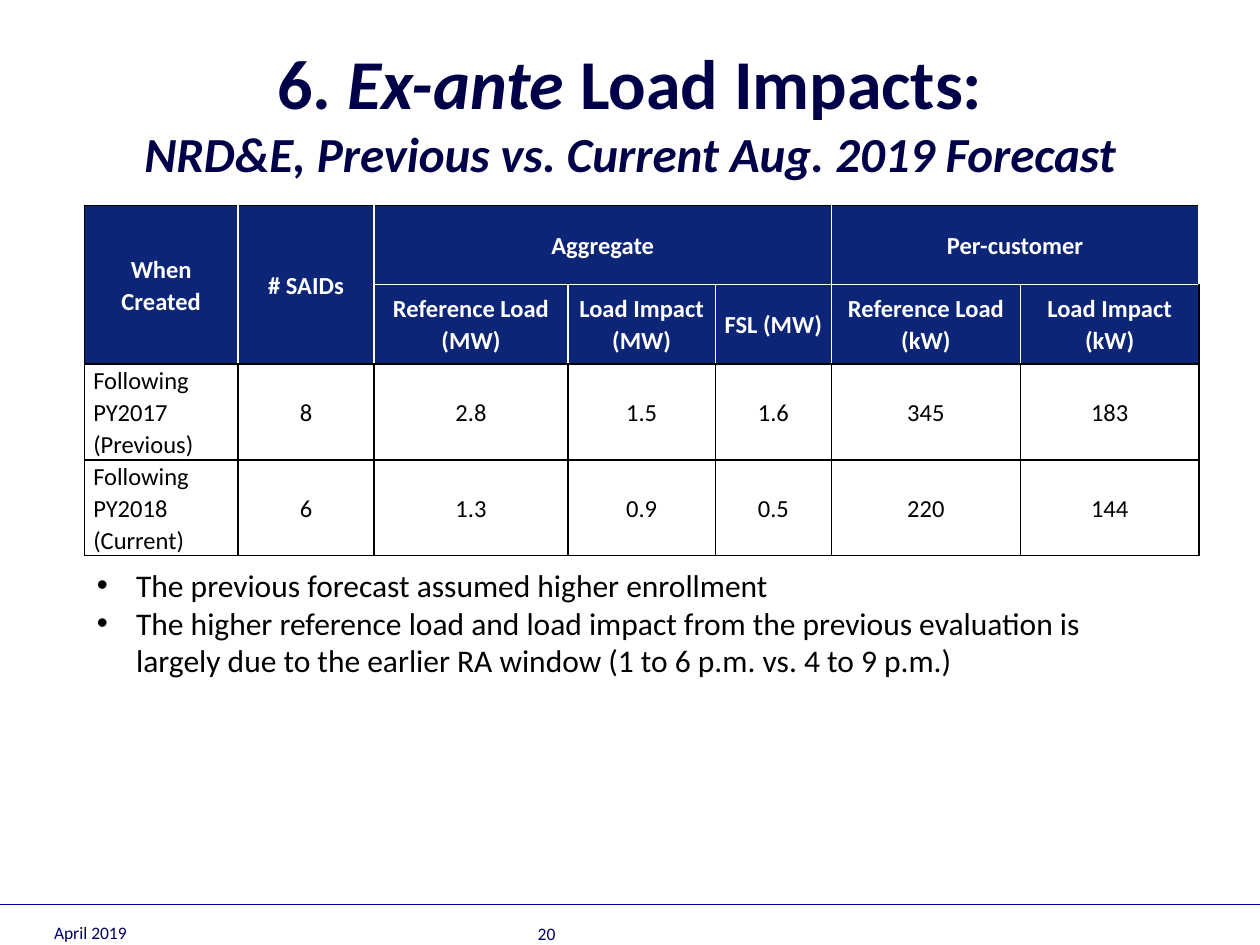
"""Build the slide comparing previous and current ex-ante load impacts."""
from lxml import etree
from pptx import Presentation
from pptx.dml.color import RGBColor
from pptx.enum.shapes import MSO_CONNECTOR
from pptx.enum.text import MSO_ANCHOR, MSO_AUTO_SIZE, PP_ALIGN
from pptx.oxml.ns import qn
from pptx.util import Cm, Pt

STRAIGHT = MSO_CONNECTOR.STRAIGHT
MIDDLE, BOTTOM = MSO_ANCHOR.MIDDLE, MSO_ANCHOR.BOTTOM
LEFT, CENTER = PP_ALIGN.LEFT, PP_ALIGN.CENTER
FIXED = MSO_AUTO_SIZE.NONE

FONT = "Calibri"
BLACK, WHITE = "000000", "FFFFFF"
HEADER_FILL, TITLE_COLOR = "0C2577", "000048"
FOOTER_COLOR, RULE_COLOR = "000066", "000099"

HEADER_ROWS = 2
ROWS = [
    ["When Created", "# SAIDs", "Aggregate", "", "", "Per-customer", ""],
    ["", "", "Reference Load (MW)", "Load Impact (MW)", "FSL (MW)",
     "Reference Load (kW)", "Load Impact (kW)"],
    ["Following PY2017 (Previous)", "8", "2.8", "1.5", "1.6", "345", "183"],
    ["Following PY2018 (Current)", "6", "1.3", "0.9", "0.5", "220", "144"],
]
MERGES = [(0, 0, 1, 0), (0, 1, 1, 1), (0, 2, 0, 4), (0, 5, 0, 6)]
COLUMN_WIDTHS = [3.1, 2.74, 3.91, 2.97, 2.34, 3.81, 3.6]
ROW_HEIGHTS = [1.6, 1.6, 1.93, 1.93]
FINDINGS = [
    "The previous forecast assumed higher enrollment",
    "The higher reference load and load impact from the previous evaluation is "
    "largely due to the earlier RA window (1 to 6 p.m. vs. 4 to 9 p.m.)",
]


def rgb(value):
    """Return the colour for a hex string."""
    return RGBColor.from_string(value)


def place(shape, left, top, width, height):
    """Position a shape, in centimetres."""
    shape.left, shape.top = Cm(left), Cm(top)
    shape.width, shape.height = Cm(width), Cm(height)


def style(paragraph, size, color, bold=False):
    """Set the font shared by all runs of a paragraph."""
    font = paragraph.font
    font.name, font.size, font.bold = FONT, Pt(size), bold
    font.color.rgb = rgb(color)


def add_title(slide):
    """Fill the title placeholder with heading and subheading."""
    title = slide.shapes.title
    place(title, 1.27, 0.64, 22.86, 3.18)
    frame = title.text_frame
    frame.auto_size, frame.vertical_anchor = FIXED, MIDDLE
    heading = frame.paragraphs[0]
    heading.alignment = CENTER
    style(heading, 40, TITLE_COLOR, bold=True)
    for text, italic in [("6. ", False), ("Ex-ante", True), (" Load Impacts:", False)]:
        run = heading.add_run()
        run.text, run.font.italic = text, italic
    heading.add_line_break()
    subheading = heading.add_run()
    subheading.text = "NRD&E, Previous vs. Current Aug. 2019 Forecast"
    subheading.font.size, subheading.font.italic = Pt(28), True


def set_borders(cell, colors):
    """Draw the left, right, top and bottom borders of a cell."""
    properties = cell._tc.get_or_add_tcPr()
    for position, (side, color) in enumerate(zip("LRTB", colors)):
        border = etree.Element(qn(f"a:ln{side}"), w=str(Pt(1)))
        fill = etree.SubElement(border, qn("a:solidFill"))
        etree.SubElement(fill, qn("a:srgbClr"), val=color)
        properties.insert(position, border)


def border_colors(row, column):
    """Choose black around the table and its body, white inside the header."""
    if row >= HEADER_ROWS:
        return [BLACK] * 4
    inside = (column > 0, column < len(COLUMN_WIDTHS) - 1,
              row > 0, row == 0 and column >= 2)
    return [WHITE if is_inside else BLACK for is_inside in inside]


def fill_cell(cell, text, row, column):
    """Write and format one table cell."""
    is_header = row < HEADER_ROWS
    cell.margin_left = cell.margin_right = Cm(0.18)
    cell.margin_top = cell.margin_bottom = 0
    cell.vertical_anchor = MIDDLE
    if is_header:
        cell.fill.solid()
        cell.fill.fore_color.rgb = rgb(HEADER_FILL)
    else:
        cell.fill.background()
    set_borders(cell, border_colors(row, column))
    cell.text = text
    paragraph = cell.text_frame.paragraphs[0]
    paragraph.alignment = CENTER if is_header or column else LEFT
    paragraph.line_spacing = 1.07
    style(paragraph, 14, WHITE if is_header else BLACK, bold=is_header)


def add_forecast_table(slide):
    """Add the table of previous and current forecasts."""
    table = slide.shapes.add_table(
        len(ROWS), len(COLUMN_WIDTHS), Cm(1.7), Cm(4.14),
        Cm(sum(COLUMN_WIDTHS)), Cm(sum(ROW_HEIGHTS))).table
    table.first_row = table.horz_banding = False
    for column, width in zip(table.columns, COLUMN_WIDTHS):
        column.width = Cm(width)
    for row, height in zip(table.rows, ROW_HEIGHTS):
        row.height = Cm(height)
    for top, left, bottom, right in MERGES:
        table.cell(top, left).merge(table.cell(bottom, right))
    for row, texts in enumerate(ROWS):
        for column, text in enumerate(texts):
            fill_cell(table.cell(row, column), text, row, column)


def add_findings(slide):
    """Fill the body placeholder with the bulleted findings."""
    body = slide.placeholders[1]
    place(body, 1.7, 11.28, 22.02, 2.57)
    frame = body.text_frame
    frame.auto_size = FIXED
    frame.text = "\n".join(FINDINGS)
    for paragraph in frame.paragraphs:
        properties = paragraph._p.get_or_add_pPr()
        properties.set("marL", str(Cm(0.79)))
        properties.set("indent", str(-Cm(0.79)))
        etree.SubElement(properties, qn("a:buChar"), char="•")
        paragraph.space_before = Pt(0)
        style(paragraph, 18, BLACK)


def add_footer_text(slide, text, left, top):
    """Add a footer entry."""
    footer = slide.shapes.add_textbox(Cm(left), Cm(top), Cm(5.92), Cm(1.32))
    frame = footer.text_frame
    frame.word_wrap, frame.vertical_anchor = True, BOTTOM
    frame.text = text
    style(frame.paragraphs[0], 10, FOOTER_COLOR)


def add_footer_rule(slide, width):
    """Add the line above the footer."""
    rule = slide.shapes.add_connector(STRAIGHT, 0, Cm(18.24), width, Cm(18.24))
    rule.line.color.rgb, rule.line.width = rgb(RULE_COLOR), Pt(0.75)
    etree.SubElement(rule._element.spPr, qn("a:effectLst"))


def main():
    """Build and save the slide."""
    presentation = Presentation()
    presentation.slide_width, presentation.slide_height = Cm(25.4), Cm(19.05)
    slide = presentation.slides.add_slide(presentation.slide_layouts[1])
    add_footer_rule(slide, presentation.slide_width)
    add_footer_text(slide, "April 2019", 0.84, 17.81)
    add_footer_text(slide, "20", 10.59, 17.83)
    add_title(slide)
    add_forecast_table(slide)
    add_findings(slide)
    presentation.save("out.pptx")


if __name__ == "__main__":
    main()
